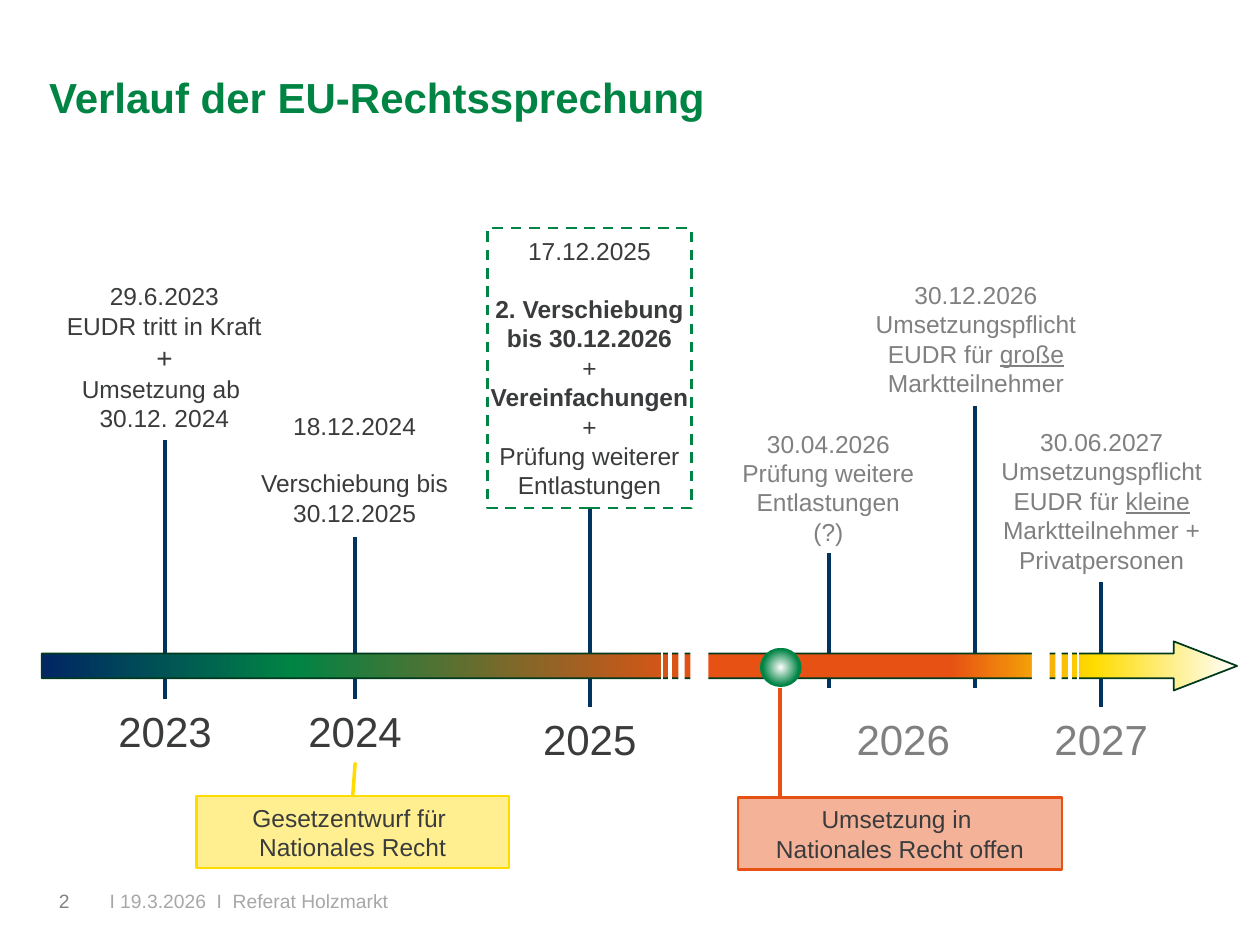
from lxml.etree import SubElement
from pptx import Presentation
from pptx.dml.color import RGBColor
from pptx.enum.dml import MSO_LINE
from pptx.enum.shapes import MSO_CONNECTOR, MSO_SHAPE
from pptx.enum.text import MSO_ANCHOR, PP_ALIGN
from pptx.oxml import parse_xml
from pptx.oxml.ns import nsdecls, qn
from pptx.util import Cm, Pt

COLORS = {
    "green": "008444", "dark green": "003A1E", "navy": "002664", "blue": "00345F",
    "orange": "E75113", "yellow": "FFDC00", "white": "FFFFFF", "text": "3A3B3C",
    "future": "808080", "number": "828480", "footer": "A6A7A8",
}
TIGHT = (0, 0.13, 0, 0.13)
ROOMY = (0.25, 0.13, 0.25, 0.13)
BOLD = {"bold": True}
UNDERLINED = {"underline": True}
LINE_GAP = 16.1
BAR_TOP = 12.93
BAR_HEIGHT = 0.99

# Label frame, colour, gap after the date, paragraphs made of (text, font settings)
LABELS = [
    ((0.94, 5.54, 4.75, 3.33), "text", 0, [
        [("29.6.2023", {})], [("EUDR tritt in Kraft", {})], [("+", {"size": Pt(16)})],
        [("Umsetzung ab ", {})], [("30.12. 2024", {})]]),
    ((5.23, 8.15, 3.84, 2.64), "text", LINE_GAP, [
        [("18.12.2024", {})], [("Verschiebung bis 30.12.2025", {})]]),
    ((14.78, 8.51, 3.84, 2.64), "future", 0, [
        [("30.04.2026", {})], [("Prüfung weitere Entlastungen", {})], [("(?)", {})]]),
    ((17.58, 5.51, 4.19, 2.64), "future", 0, [
        [("30.12.2026", {})],
        [("Umsetzungspflicht EUDR für ", {}), ("große", UNDERLINED),
         (" Marktteilnehmer", {})]]),
    ((20.04, 8.48, 4.34, 3.25), "future", 0, [
        [("30.06.2027", {})], [("Umsetzungspflicht", {})],
        [("EUDR für ", {}), ("kleine", UNDERLINED)],
        [("Marktteilnehmer +", {})], [("Privatpersonen", {})]]),
]
POSTPONEMENT = [
    [("17.12.2025", {})],
    [("2. Verschiebung bis 30.12.2026", BOLD)],
    [("+ ", {}), ("Vereinfachungen", BOLD)],
    [("+", {})],
    [("Prüfung weiterer Entlastungen", {})],
]
# Position, bottom and top of each milestone line
MILESTONES = [
    (19.66, 13.87, 8.18), (16.71, 13.87, 11.15), (3.33, 14.1, 8.86),
    (7.16, 14.1, 10.82), (11.89, 14.25, 10.24), (22.2, 14.25, 11.73),
]
YEARS = [
    ("2023", 3.33, 14.1, "text"), ("2024", 7.16, 14.1, "text"),
    ("2025", 11.89, 14.25, "text"), ("2026", 18.21, 14.25, "future"),
    ("2027", 22.2, 14.25, "future"),
]


def color(name):
    return RGBColor.from_string(COLORS[name])


def write_text(shape, paragraphs, size, color_name, align=PP_ALIGN.CENTER,
               anchor=MSO_ANCHOR.TOP, insets=TIGHT, first_gap=0):
    """Fill a shape with paragraphs; first_gap (points) follows the first one."""
    frame = shape.text_frame
    frame.word_wrap = True
    frame.vertical_anchor = anchor
    (frame.margin_left, frame.margin_top,
     frame.margin_right, frame.margin_bottom) = map(Cm, insets)
    for index, runs in enumerate(paragraphs):
        paragraph = frame.add_paragraph() if index else frame.paragraphs[0]
        paragraph.alignment = align
        if index == 1 and first_gap:
            paragraph.space_before = Pt(first_gap)
        for text, settings in runs:
            run = paragraph.add_run()
            run.text = text
            run.font.name = "Arial"
            run.font.size = Pt(size)
            run.font.color.rgb = color(color_name)
            for name, value in settings.items():
                setattr(run.font, name, value)


def add_text(shapes, frame, paragraphs, size, color_name, **options):
    box = shapes.add_textbox(*map(Cm, frame))
    write_text(box, paragraphs, size, color_name, **options)


def add_line(shapes, start, end, color_name, width=2):
    line = shapes.add_connector(MSO_CONNECTOR.STRAIGHT, *map(Cm, start + end))
    line.line.color.rgb = color(color_name)
    line.line.width = Pt(width)
    SubElement(line._element.spPr, qn("a:effectLst"))


def add_shape(shapes, kind, frame, fill=None, alpha=None, line=None, width=1.5):
    shape = shapes.add_shape(kind, *map(Cm, frame))
    shape.shadow.inherit = False
    if fill:
        shape.fill.solid()
        shape.fill.fore_color.rgb = color(fill)
    else:
        shape.fill.background()
    if alpha:
        fill_color = shape._element.spPr.find(qn("a:solidFill"))[0]
        SubElement(fill_color, qn("a:alpha"), val=str(alpha * 1000))
    if line:
        shape.line.color.rgb = color(line)
        shape.line.width = Pt(width)
    else:
        shape.line.fill.background()
    return shape


def set_gradient(shape, stops, direction):
    """Replace the fill by a gradient of (percent, colour name) stops."""
    stop_xml = "".join(
        f'<a:gs pos="{percent * 1000}"><a:srgbClr val="{COLORS[name]}"/></a:gs>'
        for percent, name in stops)
    gradient = parse_xml(f'<a:gradFill {nsdecls("a")} rotWithShape="1">'
                         f'<a:gsLst>{stop_xml}</a:gsLst>{direction}</a:gradFill>')
    properties = shape._element.spPr
    properties.replace(properties.find(qn("a:noFill")), gradient)


def add_time_arrow(shapes):
    arrow = add_shape(shapes, MSO_SHAPE.RIGHT_ARROW, (0.84, BAR_TOP, 24.1, BAR_HEIGHT),
                      line="dark green", width=1)
    arrow.adjustments[0] = 0.5
    arrow.adjustments[1] = 1.29
    set_gradient(arrow, [(0, "navy"), (21, "green"), (55, "orange"), (76, "orange"),
                         (88, "yellow"), (100, "white")], '<a:lin ang="0" scaled="0"/>')


def add_axis_break(shapes, center, top, direction):
    """White gaps in the time arrow, thinning out towards direction (-1 or 1)."""
    group = shapes.add_group_shape().shapes
    for offset, drop, width in [(0, 0, 0.36), (0.36, 0.08, 0.13)]:
        left = center + direction * offset - width / 2
        add_shape(group, MSO_SHAPE.RECTANGLE, (left, top + drop, width, BAR_HEIGHT), "white")
    for offset, rise, width in [(0.59, 0.18, 2), (0.75, 0.36, 1)]:
        x = center + direction * offset
        add_line(group, (x, top - rise + 1.35), (x, top - rise), "white", width)


def add_marker(shapes):
    marker = add_shape(shapes, MSO_SHAPE.OVAL, (15.32, 13.06, 0.84, 0.79))
    set_gradient(marker, [(0, "white"), (64, "green")],
                 '<a:path path="circle"><a:fillToRect l="50000" t="50000" '
                 'r="50000" b="50000"/></a:path>')


def add_national_law_box(shapes, frame, color_name, lines):
    box = add_shape(shapes, MSO_SHAPE.RECTANGLE, frame, color_name, 43, color_name)
    write_text(box, [[(line, {})] for line in lines], 14, "text", anchor=MSO_ANCHOR.MIDDLE)


def main():
    presentation = Presentation()
    presentation.slide_width, presentation.slide_height = Cm(25.4), Cm(19.05)
    shapes = presentation.slides.add_slide(presentation.slide_layouts[6]).shapes

    add_text(shapes, (0.99, 1.22, 22.99, 1.24), [[("Verlauf der EU-Rechtssprechung", BOLD)]],
             24, "green", align=PP_ALIGN.LEFT, anchor=MSO_ANCHOR.BOTTOM, insets=(0, 0, 0, 0))
    for left, width, text, name in [
            (1.19, 0.99, "2", "number"),
            (2.21, 22, "I 19.3.2026  I  Referat Holzmarkt", "footer")]:
        add_text(shapes, (left, 17.65, width, 1.02), [[(text, {})]], 11, name,
                 align=PP_ALIGN.LEFT, anchor=MSO_ANCHOR.MIDDLE)

    for x, bottom, top in MILESTONES:
        add_line(shapes, (x, bottom), (x, top), "blue")
    for year, center, top, name in YEARS:
        add_text(shapes, (center - 1.5, top, 3, 1.27), [[(year, {})]], 24, name, insets=ROOMY)

    add_time_arrow(shapes)
    add_axis_break(shapes, 14.1, 12.8, -1)
    add_axis_break(shapes, 20.98, BAR_TOP, 1)
    add_marker(shapes)

    for frame, name, gap, paragraphs in LABELS:
        add_text(shapes, frame, paragraphs, 14, name, first_gap=gap)
    highlight = add_shape(shapes, MSO_SHAPE.RECTANGLE, (9.83, 4.6, 4.11, 5.64), line="green")
    highlight.line.dash_style = MSO_LINE.DASH
    write_text(highlight, POSTPONEMENT, 14, "text", anchor=MSO_ANCHOR.MIDDLE,
               first_gap=LINE_GAP)

    add_national_law_box(shapes, (14.88, 16.08, 6.53, 1.45), "orange",
                         ["Umsetzung in ", "Nationales Recht offen"])
    add_national_law_box(shapes, (3.96, 16.05, 6.3, 1.45), "yellow",
                         ["Gesetzentwurf für ", "Nationales Recht"])
    add_line(shapes, (15.72, 13.87), (15.72, 16.08), "orange")
    add_line(shapes, (7.16, 15.37), (7.11, 16.05), "yellow")

    presentation.save("out.pptx")


if __name__ == "__main__":
    main()
